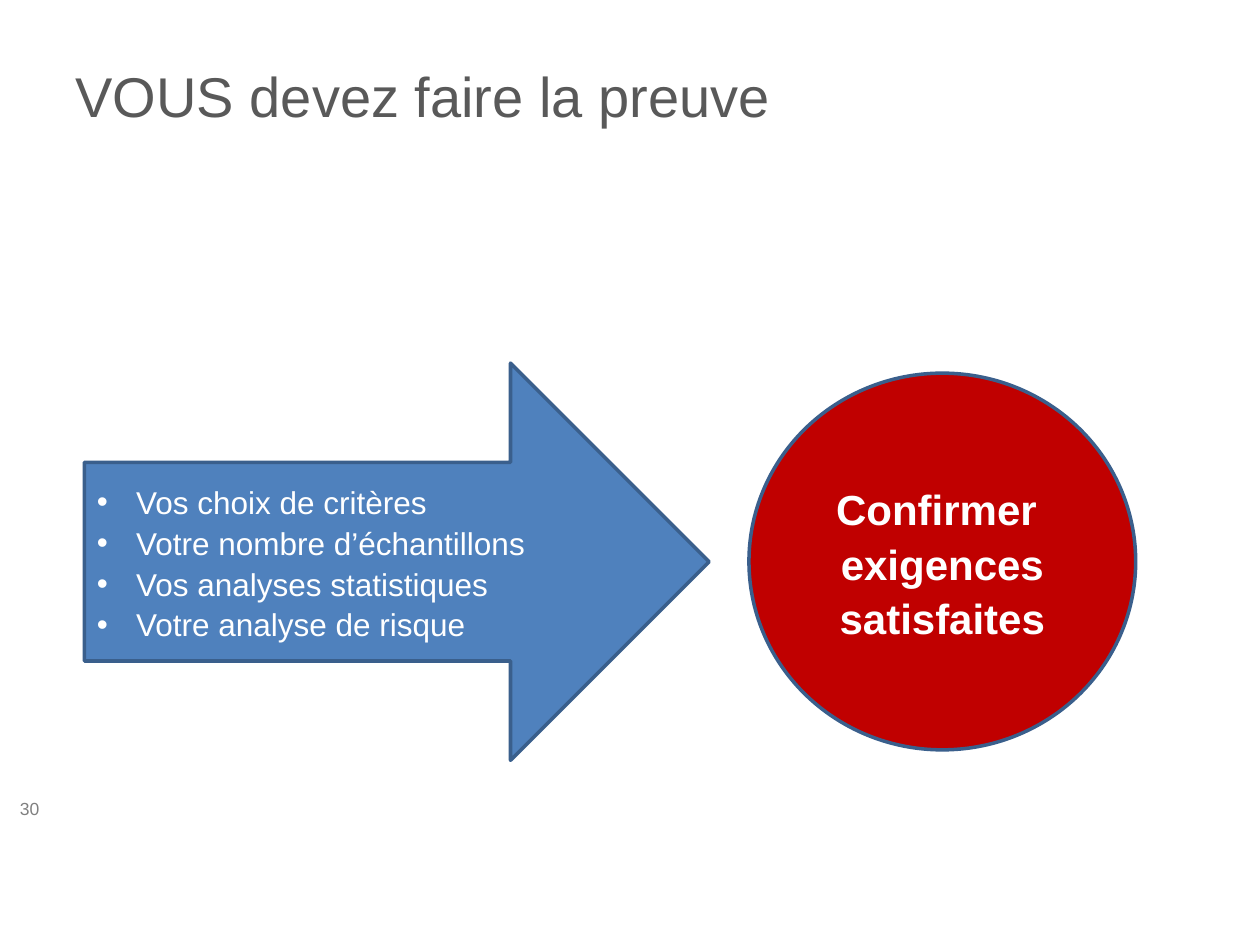
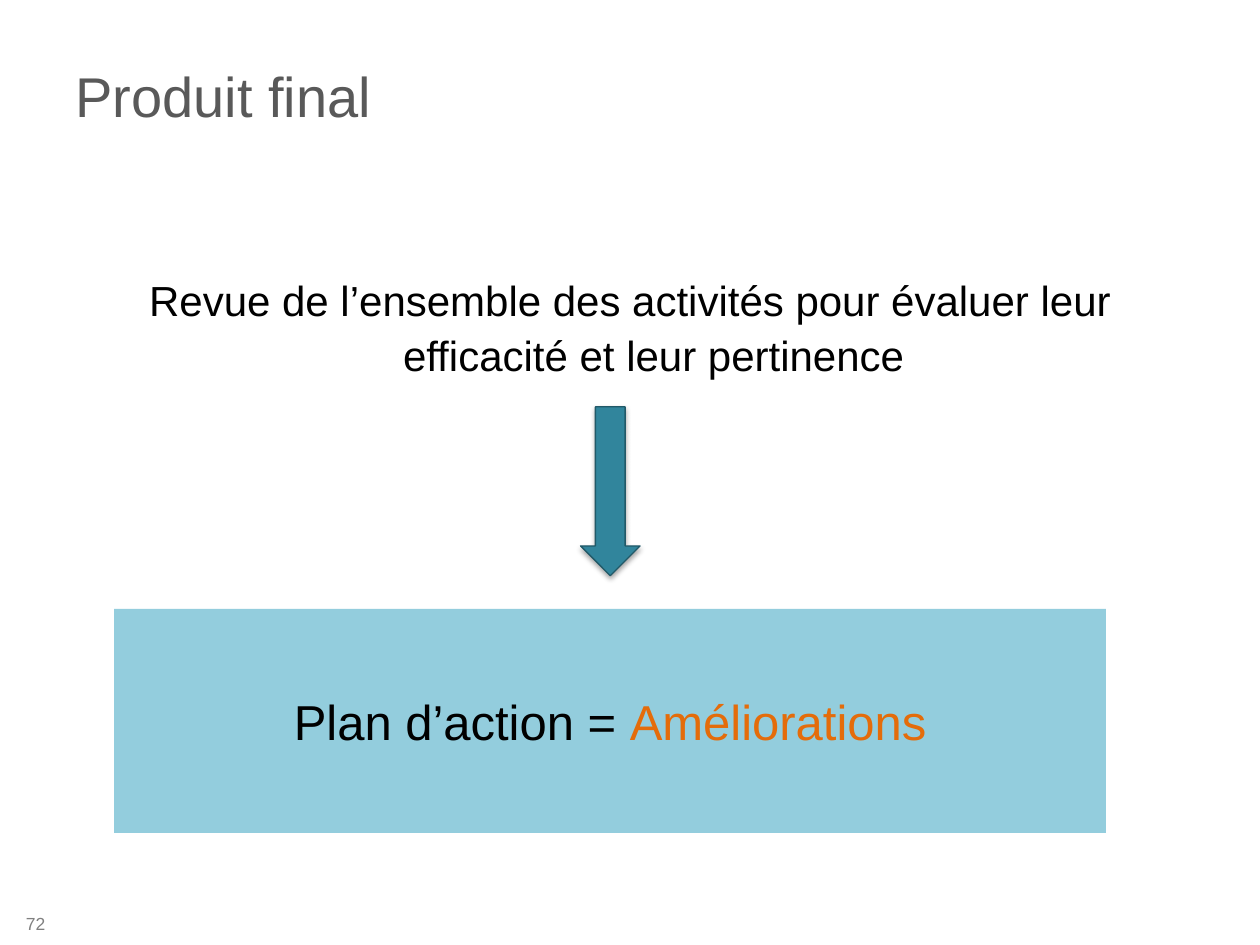
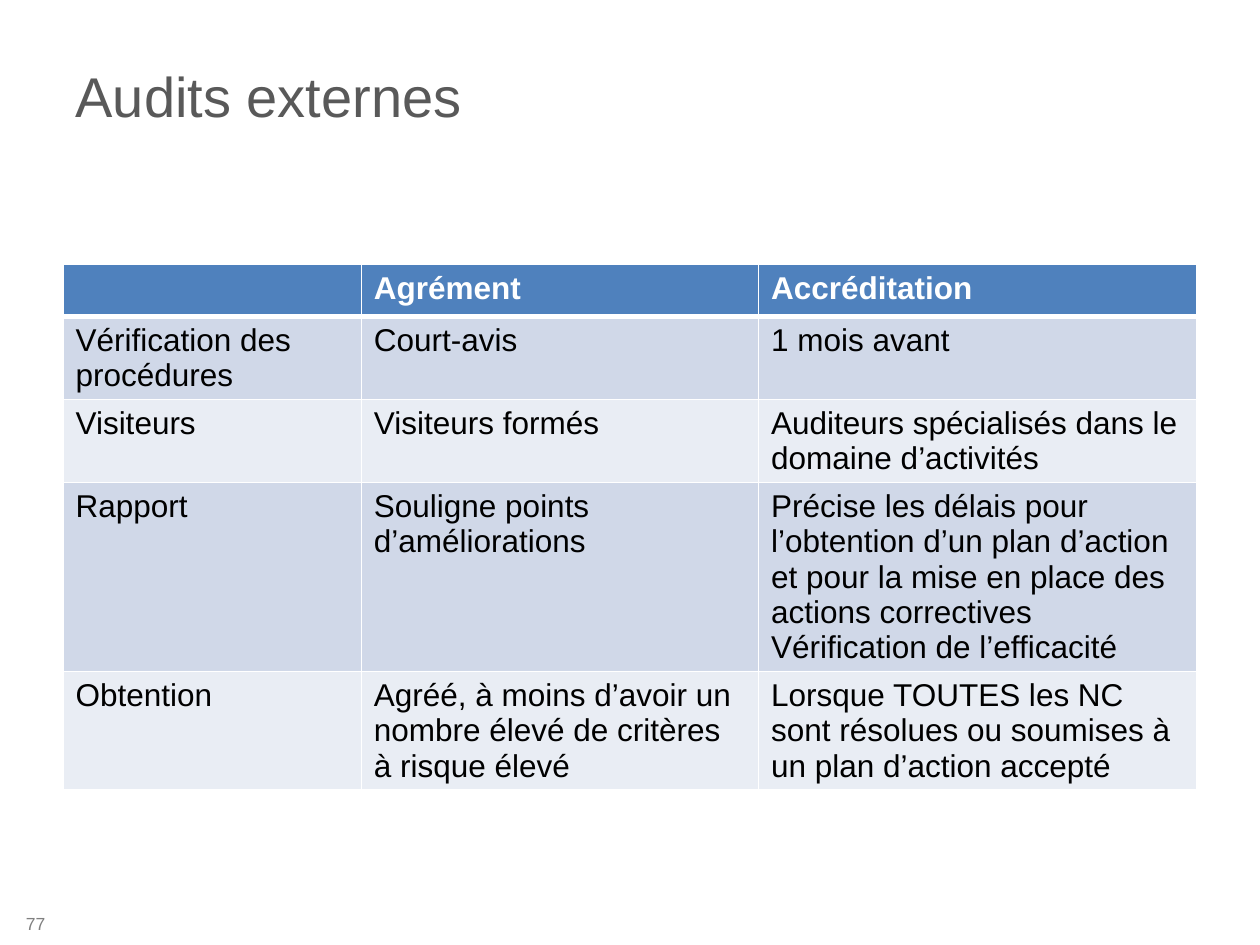
from lxml import etree
from pptx import Presentation
from pptx.dml.color import RGBColor
from pptx.enum.shapes import MSO_SHAPE as SHAPE
from pptx.enum.text import MSO_ANCHOR as ANCHOR, MSO_AUTO_SIZE as FIT, PP_ALIGN as ALIGN
from pptx.oxml.ns import qn
from pptx.util import Pt

COLORS = {
    "title": "595959", "page": "808080", "black": "000000", "white": "FFFFFF",
    "blue": "4F81BD", "outline": "3A5F8C", "red": "C00000",
    "teal": "31859C", "dark_teal": "215968", "aqua": "93CDDD", "orange": "E46C0A",
    "band_dark": "D0D8E8", "band_light": "E9EDF4",
}
FONT = "Arial"
LOOSE = 1.08
TITLE_ONLY = 5


def rgb(name):
    return RGBColor.from_string(COLORS[name])


def add_xml(parent, tag, **attrs):
    return etree.SubElement(parent, qn(tag), {k: str(v) for k, v in attrs.items()})


def add_color(parent, name):
    return add_xml(parent, "a:srgbClr", val=COLORS[name])


class Deck:
    def __init__(self):
        self.prs = Presentation()
        self.prs.slide_width, self.prs.slide_height = Pt(720), Pt(540)
        self.s = None

    def slide(self, title, page, page_right=33, page_middle=527.75):
        """Start a slide with its title and its page number."""
        self.s = self.prs.slides.add_slide(self.prs.slide_layouts[TITLE_ONLY])
        sp = self.s.shapes.title
        sp.left, sp.top, sp.width, sp.height = Pt(36), Pt(9.5), Pt(648), Pt(90)
        self.fill_text(sp.text_frame, [title], 32, "title")
        height = 24
        self.text(0, page_middle - height / 2, page_right, height, [page], 10, "page",
                  align=ALIGN.RIGHT)

    def fill_text(self, tf, lines, size, color, bold=False, align=ALIGN.LEFT,
                  anchor=ANCHOR.MIDDLE, hang=0, bullet=None, spacing=None):
        """Fill a text frame; a line is a string or a list of (text, color) runs."""
        tf.word_wrap, tf.auto_size, tf.vertical_anchor = True, FIT.NONE, anchor
        for i, line in enumerate(lines):
            p = tf.add_paragraph() if i else tf.paragraphs[0]
            p.alignment = align
            if spacing:
                p.line_spacing = spacing
            if hang:
                pPr = p._p.get_or_add_pPr()
                pPr.set("marL", str(Pt(hang)))
                pPr.set("indent", str(-Pt(hang)))
                if bullet:
                    add_xml(pPr, "a:buFont", typeface=FONT)
                    add_xml(pPr, "a:buChar", char=bullet)
            for text, run_color in [(line, color)] if isinstance(line, str) else line:
                r = p.add_run()
                r.text = text
                self.format_run(r, size, run_color, bold)

    def format_run(self, r, size, color, bold):
        r.font.name, r.font.size, r.font.bold = FONT, Pt(size), bold
        r.font.color.rgb = rgb(color)

    def text(self, x, y, w, h, lines, size, color, **style):
        sp = self.s.shapes.add_textbox(Pt(x), Pt(y), Pt(w), Pt(h))
        self.fill_text(sp.text_frame, lines, size, color, **style)

    def shape(self, kind, x, y, w, h, fill, line=None, line_width=2):
        sp = self.s.shapes.add_shape(kind, Pt(x), Pt(y), Pt(w), Pt(h))
        sp.shadow.inherit = False
        sp.fill.solid()
        sp.fill.fore_color.rgb = rgb(fill)
        if line:
            sp.line.color.rgb = rgb(line)
            sp.line.width = Pt(line_width)
        else:
            sp.line.fill.background()
        return sp

    def drop_shadow(self, sp, blur, distance, opacity):
        effects = sp._element.spPr.find(qn("a:effectLst"))
        shadow = add_xml(effects, "a:outerShdw", blurRad=Pt(blur), dist=Pt(distance),
                         dir=90 * 60000, rotWithShape=0)
        add_xml(add_color(shadow, "black"), "a:alpha", val=opacity * 1000)

    def borders(self, cell, top, bottom):
        tcPr = cell._tc.get_or_add_tcPr()
        for side, width in (("L", 1), ("R", 1), ("T", top), ("B", bottom)):
            ln = add_xml(tcPr, f"a:ln{side}", w=Pt(width))
            add_color(add_xml(ln, "a:solidFill"), "white")

    def table(self, x, y, widths, heights, rows):
        """Draw a table with a header row and banded body; a cell is a list of lines."""
        frame = self.s.shapes.add_table(len(rows), len(widths), Pt(x), Pt(y),
                                        Pt(sum(widths)), Pt(sum(heights)))
        tbl = frame.table
        for col, width in zip(tbl.columns, widths):
            col.width = Pt(width)
        for i, (height, row) in enumerate(zip(heights, rows)):
            tbl.rows[i].height = Pt(height)
            header = i == 0
            fill = "blue" if header else "band_dark" if i % 2 else "band_light"
            for j, lines in enumerate(row):
                cell = tbl.cell(i, j)
                self.borders(cell, top=3 if i == 1 else 1, bottom=3 if header else 1)
                cell.fill.solid()
                cell.fill.fore_color.rgb = rgb(fill)
                cell.vertical_anchor = ANCHOR.TOP
                self.fill_cell(cell, lines, "white" if header else "black", header)

    def fill_cell(self, cell, lines, color, bold):
        cell.text_frame.text = "\n".join(lines)
        for p in cell.text_frame.paragraphs:
            p.font.size = Pt(18)
            for r in p.runs:
                self.format_run(r, 18, color, bold)


def proof_slide(deck):
    deck.slide("VOUS devez faire la preuve", "30", page_right=29.5, page_middle=462.25)
    arrow = deck.shape(SHAPE.RIGHT_ARROW, 48.25, 207.5, 357, 227, "blue", "outline")
    deck.fill_text(arrow.text_frame,
                   ["Vos choix de critères", "Votre nombre d’échantillons",
                    "Vos analyses statistiques", "Votre analyse de risque"],
                   18, "white", hang=22.5, bullet="•", spacing=LOOSE)
    goal = deck.shape(SHAPE.OVAL, 428, 213.25, 221, 215.25, "red", "outline")
    deck.fill_text(goal.text_frame, ["Confirmer ", "exigences satisfaites"], 24, "white",
                   bold=True, align=ALIGN.CENTER, spacing=LOOSE)


def result_slide(deck):
    deck.slide("Produit final", "72")
    deck.text(36, 151.25, 648, 70,
              ["Revue de l’ensemble des activités pour évaluer leur efficacité "
               "et leur pertinence"],
              24, "black", align=ALIGN.CENTER, anchor=ANCHOR.TOP, hang=27, spacing=LOOSE)
    arrow = deck.shape(SHAPE.DOWN_ARROW, 331.75, 232.5, 34, 96.5, "teal", "dark_teal", 0.75)
    deck.drop_shadow(arrow, blur=3.1, distance=1.8, opacity=35)
    plan = deck.shape(SHAPE.RECTANGLE, 65.25, 348, 566.75, 128, "aqua")
    deck.fill_text(plan.text_frame,
                   [[("Plan d’action = ", "black"), ("Améliorations", "orange")]],
                   28, "black", align=ALIGN.CENTER)


def audit_slide(deck):
    deck.slide("Audits externes", "77")
    deck.table(36, 151.25, [170.5, 227, 250.5], [29.5, 47.5, 47.5, 107.5, 67.5], [
        [[], ["Agrément"], ["Accréditation"]],
        [["Vérification des procédures"], ["Court-avis"], ["1 mois avant"]],
        [["Visiteurs"], ["Visiteurs formés"],
         ["Auditeurs spécialisés dans le domaine d’activités"]],
        [["Rapport"], ["Souligne points d’améliorations"],
         ["Précise les délais pour l’obtention d’un plan d’action et pour la mise en "
          "place des actions correctives",
          "Vérification de l’efficacité"]],
        [["Obtention"],
         ["Agréé, à moins d’avoir un nombre élevé de critères à risque élevé"],
         ["Lorsque TOUTES les NC sont résolues ou soumises à un plan d’action accepté"]],
    ])


def main():
    deck = Deck()
    proof_slide(deck)
    result_slide(deck)
    audit_slide(deck)
    deck.prs.save("out.pptx")


if __name__ == "__main__":
    main()
